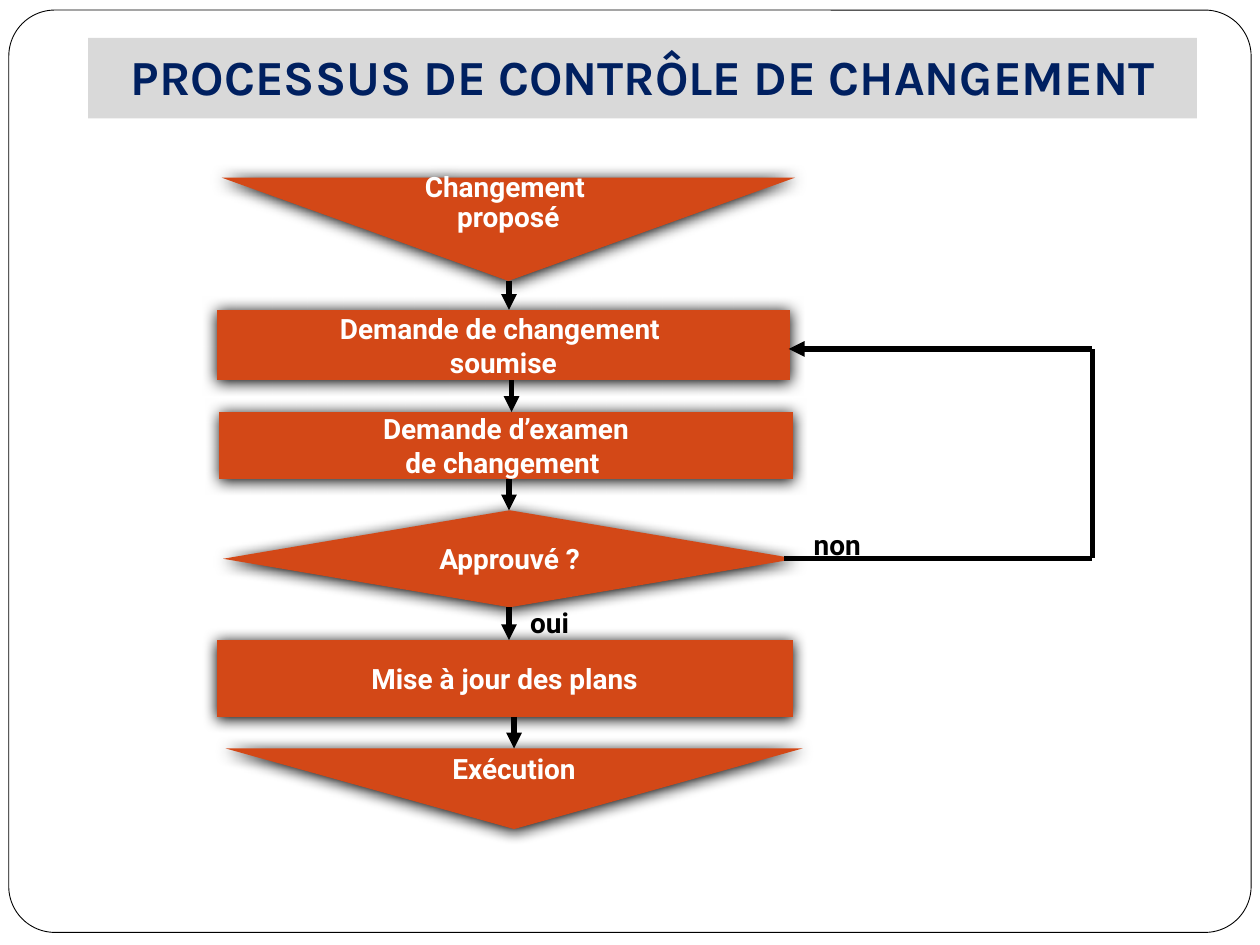
from dataclasses import dataclass

from lxml.etree import SubElement
from pptx import Presentation
from pptx.dml.color import RGBColor
from pptx.enum.shapes import MSO_CONNECTOR, MSO_SHAPE
from pptx.enum.text import MSO_ANCHOR, PP_ALIGN
from pptx.oxml.ns import qn
from pptx.util import Inches, Pt

COLUMNS, ROWS = 100, 75


@dataclass(frozen=True)
class Theme:
    paper: str = "FFFFFF"
    ink: str = "000000"
    band: str = "D9D9D9"
    heading: str = "002060"
    step: str = "D34817"
    heading_font: str = "Karla"
    body_font: str = "Roboto"
    heading_size: float = 28
    body_size: float = 16
    frame_width: float = 0.5
    arrow_width: float = 3
    hanging: float = 0.38


class FlowSlide:
    def __init__(self, deck, theme):
        self.theme = theme
        self.slide = deck.slides.add_slide(deck.slide_layouts[6])
        self.column = deck.slide_width / COLUMNS
        self.row = deck.slide_height / ROWS

    def place(self, *lengths):
        units = (self.column, self.row) * 2
        return [round(length * unit) for length, unit in zip(lengths, units)]

    def block(self, preset, area, fill):
        shape = self.slide.shapes.add_shape(preset, *self.place(*area))
        shape.shadow.inherit = False
        shape.fill.solid()
        shape.fill.fore_color.rgb = RGBColor.from_string(fill)
        shape.line.fill.background()
        return shape

    def styled_run(self, paragraph, words, font, size, color):
        run = paragraph.add_run()
        run.text = words
        run.font.name, run.font.size, run.font.bold = font, Pt(size), True
        run.font.color.rgb = RGBColor.from_string(color)

    def body_lines(self, text_frame, lines, color, align, spacing=None):
        theme = self.theme
        for index, words in enumerate(lines):
            paragraph = text_frame.add_paragraph() if index else text_frame.paragraphs[0]
            paragraph.alignment = align
            paragraph.line_spacing = spacing
            properties = paragraph._p.get_or_add_pPr()
            properties.set("marL", str(Inches(theme.hanging)))
            properties.set("indent", str(-Inches(theme.hanging)))
            self.styled_run(paragraph, words, theme.body_font, theme.body_size, color)

    def frame(self, area):
        border = self.block(MSO_SHAPE.ROUNDED_RECTANGLE, area, self.theme.paper)
        border.adjustments[0] = 0.05
        border.line.color.rgb = RGBColor.from_string(self.theme.ink)
        border.line.width = Pt(self.theme.frame_width)

    def title(self, words, area):
        theme = self.theme
        text_frame = self.block(MSO_SHAPE.RECTANGLE, area, theme.band).text_frame
        text_frame.word_wrap = True
        text_frame.vertical_anchor = MSO_ANCHOR.BOTTOM
        text_frame.margin_bottom = Inches(0.1)
        paragraph = text_frame.paragraphs[0]
        paragraph.alignment = PP_ALIGN.CENTER
        self.styled_run(paragraph, words, theme.heading_font, theme.heading_size,
                        theme.heading)

    def step(self, preset, area, lines, spacing=None):
        shape = self.block(preset, area, self.theme.step)
        effects = shape._element.spPr.find(qn("a:effectLst"))
        shadow = SubElement(effects, qn("a:outerShdw"), blurRad=str(Pt(8.5)),
                            dist=str(Pt(1)), dir="5400000", rotWithShape="0")
        SubElement(shadow, qn("a:srgbClr"), val=self.theme.ink)
        text_frame = shape.text_frame
        text_frame.word_wrap = False
        text_frame.vertical_anchor = MSO_ANCHOR.MIDDLE
        self.body_lines(text_frame, lines, self.theme.paper, PP_ALIGN.CENTER, spacing)

    def line(self, start, end, arrow=False):
        connector = self.slide.shapes.add_connector(
            MSO_CONNECTOR.STRAIGHT, *self.place(*start, *end))
        connector.line.color.rgb = RGBColor.from_string(self.theme.ink)
        connector.line.width = Pt(self.theme.arrow_width)
        properties = connector._element.spPr
        if arrow:
            SubElement(properties.find(qn("a:ln")), qn("a:tailEnd"), type="triangle")
        SubElement(properties, qn("a:effectLst"))

    def label(self, words, area):
        box = self.slide.shapes.add_textbox(*self.place(*area))
        box.text_frame.word_wrap = True
        self.body_lines(box.text_frame, [words], self.theme.ink, PP_ALIGN.LEFT)


def main():
    deck = Presentation()
    deck.slide_width, deck.slide_height = Inches(10), Inches(7.5)
    page = FlowSlide(deck, Theme())

    # Frame and title
    page.frame((0.7, 0.8, 98.6, 73.2))
    page.title("PROCESSUS DE CONTRÔLE DE CHANGEMENT", (7, 3, 88, 6.4))

    # Steps: preset, left, top, width, height, lines, line spacing
    merge, process = MSO_SHAPE.FLOWCHART_MERGE, MSO_SHAPE.FLOWCHART_PROCESS
    steps = [
        (merge, 17.6, 14.1, 45.5, 8.2, ["Changement ", "proposé"], 0.9),
        (process, 17.2, 24.6, 45.5, 5.6, ["Demande de changement ", "soumise"], None),
        (process, 17.4, 32.7, 45.5, 5.3, ["Demande d’examen", "de changement "], None),
        (MSO_SHAPE.FLOWCHART_DECISION, 17.7, 40.5, 45.5, 7.7, ["Approuvé ?"], None),
        (process, 17.2, 50.8, 45.7, 6.1, ["Mise à jour des plans"], None),
        (merge, 17.9, 59.4, 45.8, 6.4, ["Exécution"], None),
    ]
    for preset, left, top, width, height, lines, spacing in steps:
        page.step(preset, (left, top, width, height), lines, spacing)

    # Arrows from the foot of each step to the head of the next
    arrow_columns = [40.4, 40.6, 40.4, 40.4, 40.8]
    for column, upper, lower in zip(arrow_columns, steps, steps[1:]):
        page.line((column, upper[2] + upper[4]), (column, lower[2]), arrow=True)

    # Return loop for a refused request
    loop = [(62.2, 44.3), (86.7, 44.3), (86.7, 27.7), (62.6, 27.7)]
    for index, (start, end) in enumerate(zip(loop, loop[1:])):
        page.line(start, end, arrow=index == len(loop) - 2)

    # Decision outcomes
    page.label("oui", (41.1, 47.6, 12.4, 3.1))
    page.label("non", (63.6, 41.4, 12.4, 3.1))

    deck.save("out.pptx")


if __name__ == "__main__":
    main()
